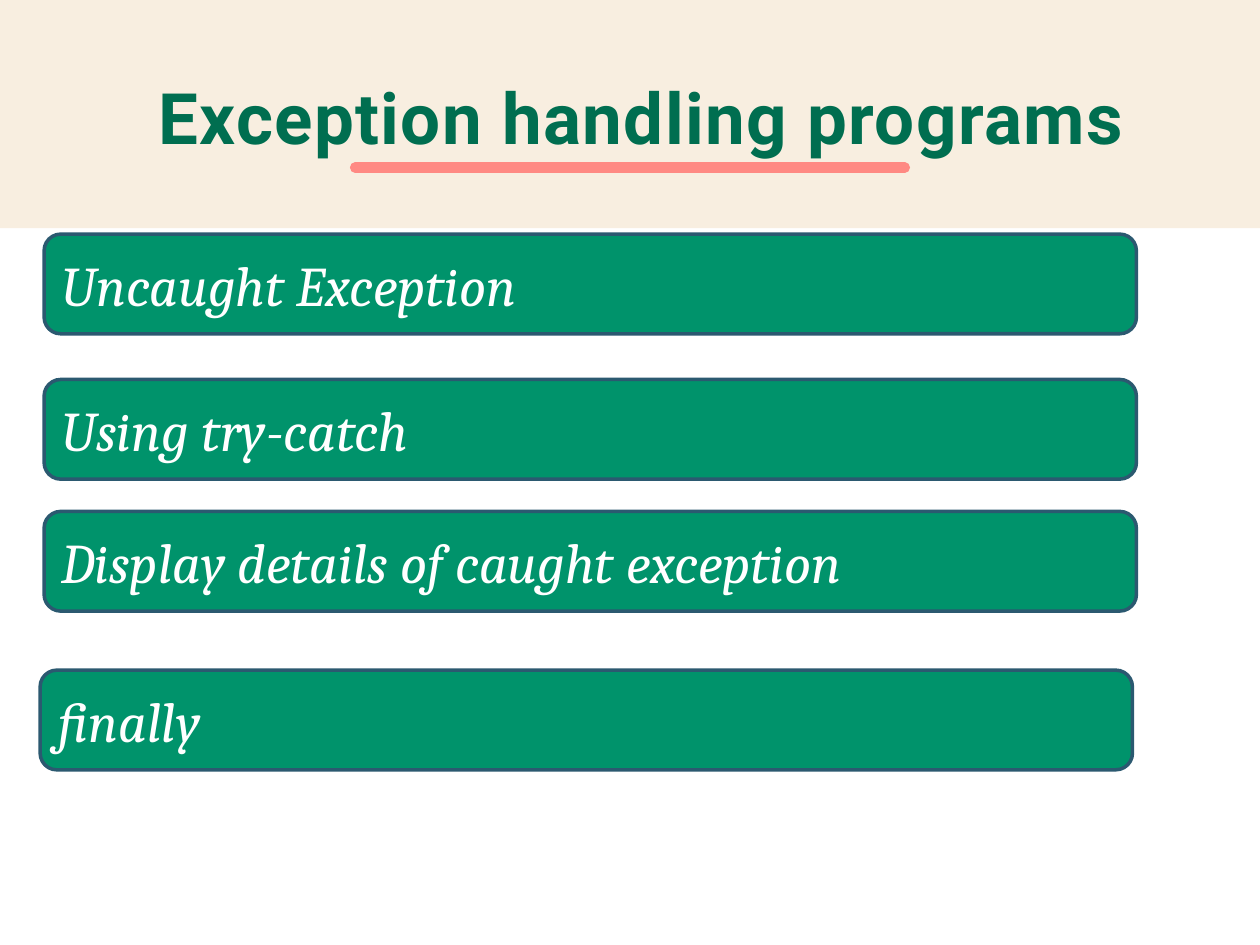
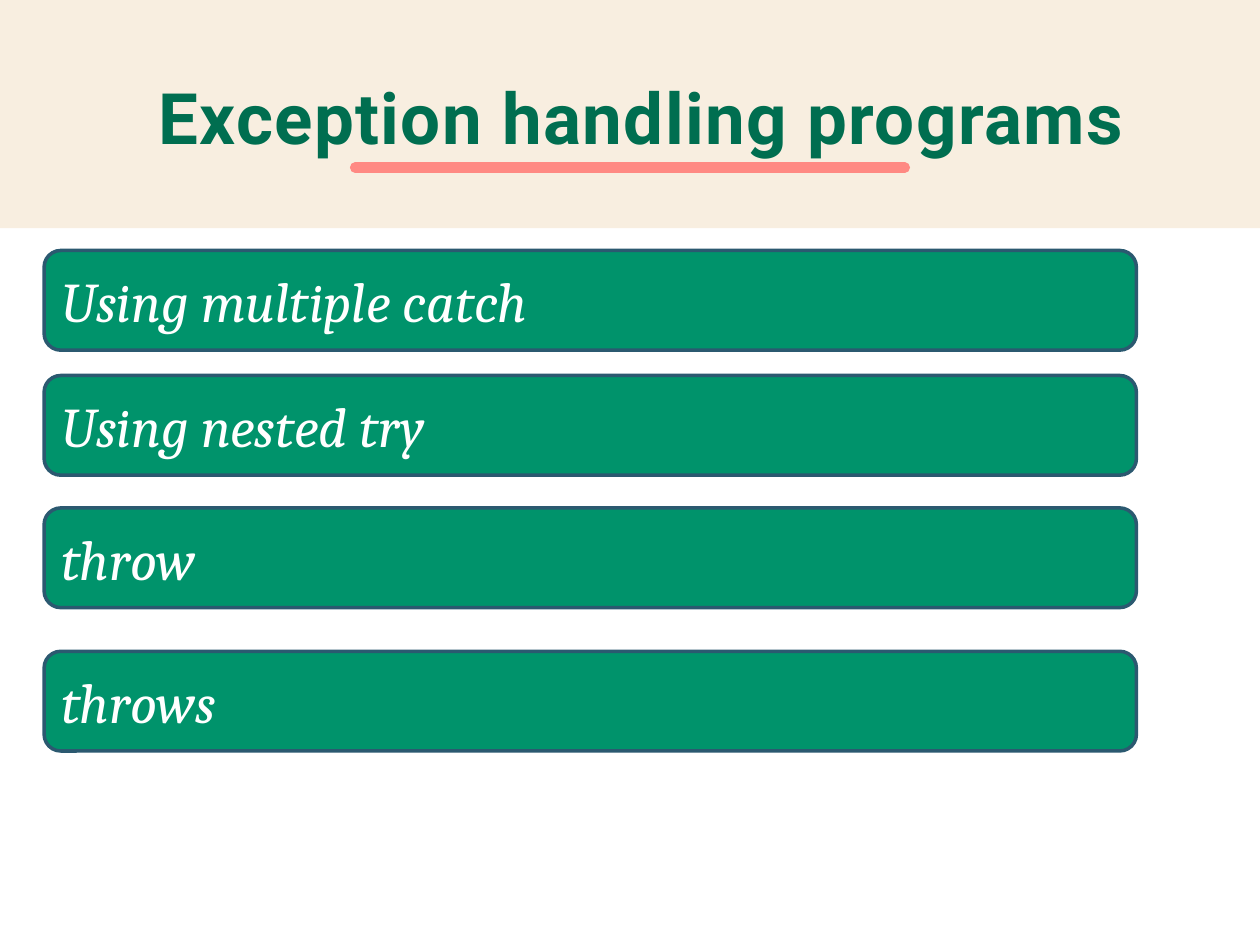
import pptx
import pptx.dml.color
import pptx.enum.shapes
import pptx.enum.text
import pptx.oxml
import pptx.util

Cm = pptx.util.Cm
Pt = pptx.util.Pt
RGBColor = pptx.dml.color.RGBColor
Shape = pptx.enum.shapes.MSO_SHAPE
Align = pptx.enum.text.PP_ALIGN

CREAM = RGBColor(0xF8, 0xEE, 0xE0)
CORAL = RGBColor(0xFF, 0x89, 0x83)
FOREST = RGBColor(0x00, 0x6E, 0x50)
GREEN = RGBColor(0x00, 0x93, 0x6B)
NAVY = RGBColor(0x2B, 0x59, 0x70)
WHITE = RGBColor(0xFF, 0xFF, 0xFF)

TITLE = "Exception handling programs"
LEFT = 0.89

# Each topic: text, left and top in cm
SLIDES = [
    [
        ("Uncaught Exception", LEFT, 4.72),
        ("Using try-catch", LEFT, 7.65),
        ("Display details of caught exception", LEFT, 10.31),
        ("finally", 0.81, 13.51),
    ],
    [
        ("Using multiple catch", LEFT, 5.05),
        ("Using nested try", LEFT, 7.57),
        ("throw", LEFT, 10.24),
        ("throws", LEFT, 13.13),
    ],
]


def write(shape, text, font, size, color, bold=False, italic=False,
          align=Align.LEFT, space=None):
    """Fill a shape with one paragraph; space is letter spacing in points."""
    frame = shape.text_frame
    frame.word_wrap = True
    frame.vertical_anchor = pptx.enum.text.MSO_ANCHOR.MIDDLE
    para = frame.paragraphs[0]
    para.alignment = align
    run = para.add_run()
    run.text = text
    run.font.name = font
    run.font.size = Pt(size)
    run.font.color.rgb = color
    run.font.bold = bold
    run.font.italic = italic
    if space:
        run.font.language_id = None
        run._r.get_or_add_rPr().set("spc", str(round(space * 100)))
    return para


def block(slide, kind, left, top, width, height, fill):
    shape = slide.shapes.add_shape(kind, Cm(left), Cm(top), Cm(width), Cm(height))
    shape.shadow.inherit = False
    shape.fill.solid()
    shape.fill.fore_color.rgb = fill
    shape.line.fill.background()
    return shape


deck = pptx.Presentation()
deck.slide_width = Cm(25.4)
deck.slide_height = Cm(19.05)

for topics in SLIDES:
    slide = deck.slides.add_slide(deck.slide_layouts[6])

    # Header band with a round-ended rule under the title
    block(slide, Shape.RECTANGLE, 0, 0, 25.4, 4.6, CREAM)
    rule = slide.shapes.add_connector(
        pptx.enum.shapes.MSO_CONNECTOR.STRAIGHT,
        Cm(7.16), Cm(3.38), Cm(18.24), Cm(3.38))
    rule.line.color.rgb = CORAL
    rule.line.width = Pt(6)
    props = rule.element.spPr
    props.find(pptx.oxml.ns.qn("a:ln")).set("cap", "rnd")
    props.append(pptx.oxml.xmlchemy.OxmlElement("a:effectLst"))

    title = slide.shapes.add_textbox(Cm(1.5), Cm(1.17), Cm(22.86), Cm(2.62))
    frame = title.text_frame
    frame.margin_left = frame.margin_right = Cm(0.33)
    frame.margin_top = frame.margin_bottom = Cm(0.18)
    para = write(title, TITLE, font="Roboto", size=40.5, color=FOREST,
                 bold=True, align=Align.CENTER, space=0.8)
    para.line_spacing = 0.85
    para.space_after = Pt(4.5)

    for text, left, top in topics:
        bar = block(slide, Shape.ROUNDED_RECTANGLE, left, top, 22.02, 2.01, GREEN)
        bar.line.color.rgb = NAVY
        bar.line.width = Pt(2)
        write(bar, text, font="Cambria", size=32, color=WHITE, italic=True)

deck.save("out.pptx")
